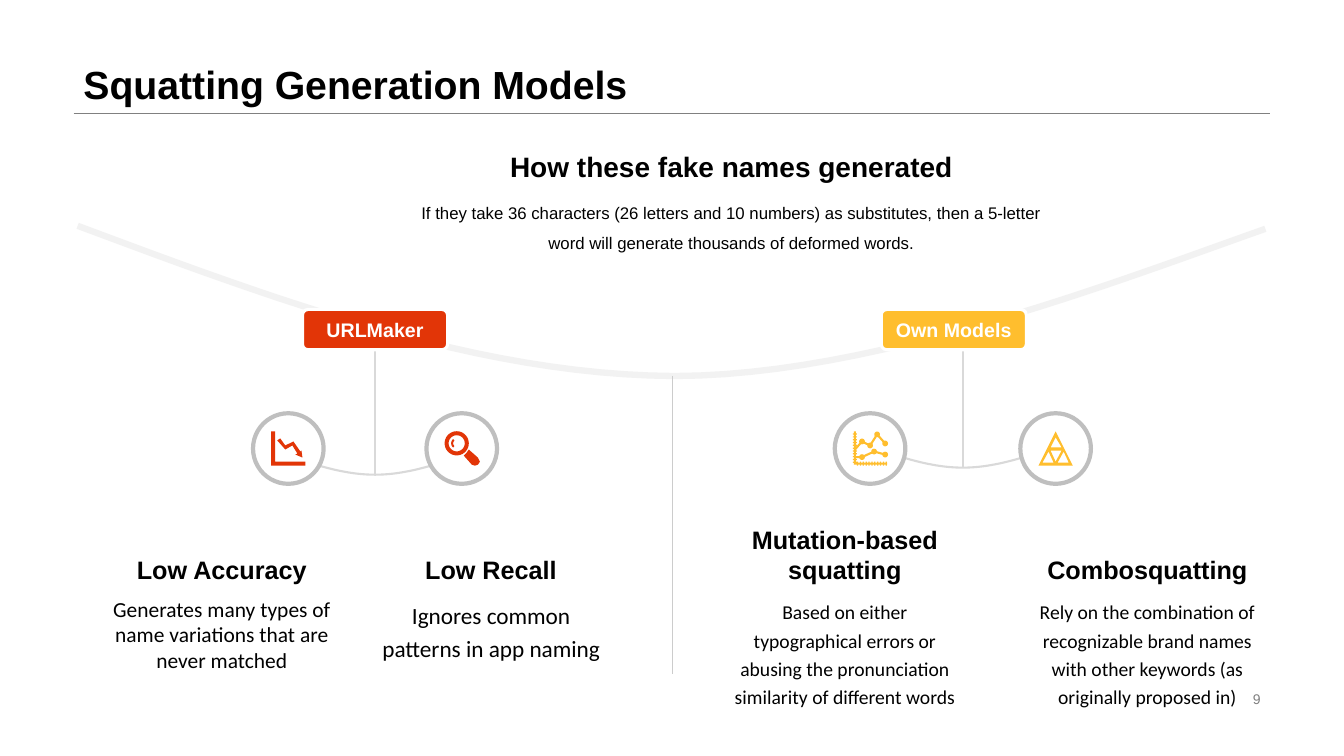
import math

import pptx
import pptx.dml.color
import pptx.enum.shapes
import pptx.enum.text
import pptx.oxml.ns
import pptx.util
from pptx.util import Inches

RED, YELLOW = "E23507", "FFBE2E"
WHITE, BLACK, GREY = "FFFFFF", "000000", "808080"
SHAPES = pptx.enum.shapes.MSO_SHAPE
ALIGN = pptx.enum.text.PP_ALIGN
ANCHOR = pptx.enum.text.MSO_ANCHOR


def color(value):
    return pptx.dml.color.RGBColor.from_string(value)


def style(shape, fill=None, line=None, width=1):
    shape.shadow.inherit = False
    if fill:
        shape.fill.solid()
        shape.fill.fore_color.rgb = color(fill)
    else:
        shape.fill.background()
    if line:
        shape.line.color.rgb = color(line)
        shape.line.width = pptx.util.Pt(width)
    else:
        shape.line.fill.background()


def write(shape, text, size, name="Arial", ink=BLACK, bold=False, align=ALIGN.CENTER,
          anchor=ANCHOR.TOP, spacing=1.0, wrap=True):
    frame = shape.text_frame
    frame.word_wrap = wrap
    frame.vertical_anchor = anchor
    paragraph = frame.paragraphs[0]
    paragraph.text = text
    paragraph.alignment = align
    paragraph.line_spacing = spacing
    font_format = {"name": name, "size": pptx.util.Pt(size), "bold": bold}
    for attribute, value in font_format.items():
        setattr(paragraph.font, attribute, value)
    paragraph.font.color.rgb = color(ink)


def add_text(slide, box, text, size, **text_format):
    write(slide.shapes.add_textbox(*map(Inches, box)), text, size, **text_format)


def add_line(slide, start, end, ink, width):
    connector = slide.shapes.add_connector(
        pptx.enum.shapes.MSO_CONNECTOR.STRAIGHT, *map(Inches, start + end))
    connector.line.color.rgb = color(ink)
    connector.line.width = pptx.util.Pt(width)
    properties = connector.element.spPr
    properties.append(properties.makeelement(pptx.oxml.ns.qn("a:effectLst"), {}))


def add_outline(slide, contours, closed=True, **shape_format):
    """Draw contours given in inches as one freeform."""
    contours = [[(Inches(x), Inches(y)) for x, y in points] for points in contours]
    builder = slide.shapes.build_freeform(*contours[0][0])
    for number, points in enumerate(contours):
        if number:
            builder.move_to(*points[0])
        builder.add_line_segments(points[1:], close=closed)
    style(builder.convert_to_shape(), **shape_format)


def bezier(*controls, steps=24):
    """Points along a cubic curve."""
    weights = (1, 3, 3, 1)
    return [
        tuple(sum(weight * (1 - t) ** (3 - power) * t ** power * control[axis]
                  for power, (weight, control) in enumerate(zip(weights, controls)))
              for axis in (0, 1))
        for t in (step / steps for step in range(steps + 1))
    ]


def circle(x, y, radius, first=0, last=360):
    return [(x + radius * math.cos(math.radians(angle)),
             y + radius * math.sin(math.radians(angle)))
            for angle in range(first, last + 1, 10)]


def rectangle(x, y, width, height):
    return [(x, y), (x + width, y), (x + width, y + height), (x, y + height)]


def place(left, top, contours):
    """Move contours from hundredths of an inch to the icon's corner."""
    return [[(left + x / 100, top + y / 100) for x, y in points] for points in contours]


def falling_chart_icon(slide, left, top, ink):
    arrow = [(9, 7), (14, 14), (22, 10), (29, 20), (30, 19), (31, 26), (24, 23),
             (26, 22), (21, 14), (14, 18), (6, 9)]
    axes = [(0, 0), (4, 0), (4, 30), (34, 30), (34, 34), (0, 34)]
    add_outline(slide, place(left, top, [arrow, axes]), fill=ink)


def magnifier_icon(slide, left, top, ink):
    handle = [(24, 18), (33, 26), (35, 30), (33, 33), (30, 34), (27, 33), (19, 24), (22, 21)]
    glint = circle(12, 11.8, 5.5, 130, 230) + circle(12, 11.8, 3.5, 130, 230)[::-1]
    lens = [circle(12, 11.8, radius) for radius in (12, 8)]
    add_outline(slide, place(left, top, [handle, glint] + lens), fill=ink)


def line_chart_icon(slide, left, top, ink):
    axes = [(1, 0), (3, 0), (3, 31), (34, 31), (34, 33), (1, 33)]
    ticks = [tick for step in range(11) for tick in (
        rectangle(0, 2 + 2.8 * step, 4, 1.2), rectangle(4 + 2.85 * step, 30, 1.2, 4))]
    add_outline(slide, place(left, top, [axes]), fill=ink)
    add_outline(slide, place(left, top, ticks), fill=ink)
    for series in ([(2, 18), (9, 10), (17, 14), (24, 3), (32, 12)],
                   [(2, 25.5), (9, 25.5), (21, 20), (32, 23)]):
        add_outline(slide, place(left, top, [series]), closed=False, line=ink, width=1.5)
        dots = [circle(x, y, 2.8) for x, y in series[1:]]
        add_outline(slide, place(left, top, dots), fill=ink)


def triangles_icon(slide, left, top, ink):
    triangles = [[(17, 0), (0, 34), (34, 34)], [(17, 6), (23, 16), (12, 16)],
                 [(4, 31), (10, 20), (15, 31)], [(12, 19), (23, 19), (17, 30)],
                 [(25, 20), (30, 31), (19, 31)]]
    add_outline(slide, place(left, top, triangles), fill=ink)


def heading(slide, left, top, width, height):
    add_line(slide, (left, top + height), (left + width, top + height), GREY, 0.25)
    add_text(slide, (left, top, width, height), "Squatting Generation Models", 28,
             bold=True, align=ALIGN.LEFT, anchor=ANCHOR.BOTTOM, spacing=0.9)


def introduction(slide, left, top, width):
    add_text(slide, (left, top, width, 0.63), "How these fake names generated", 20,
             bold=True, anchor=ANCHOR.BOTTOM)
    add_text(slide, (left, top + 0.62, width, 0.89),
             "If they take 36 characters (26 letters and 10 numbers) as substitutes, "
             "then a 5-letter word will generate thousands of deformed words.", 12, spacing=1.5)


def backdrop(slide, left, top):
    """Sagging curve with the divider below its lowest point."""
    bottom = top + 1.49
    middle = (left + 5.92, bottom)
    curve = bezier((left, top), (left + 1.98, top + 0.74), (left + 3.96, top + 1.48), middle)
    curve += bezier(middle, (left + 7.89, bottom), (left + 10.31, top + 0.55),
                    (left + 11.78, top + 0.03))[1:]
    add_outline(slide, [curve], closed=False, line="F2F2F2", width=4.5)
    add_line(slide, (left + 5.9, bottom), (left + 5.9, bottom + 2.96), "CCCCCC", 0.5)


def branch(slide, box, name, ink, label_left, arc_top, icons):
    """Label, stem and arc that carry one round icon at each end of the box."""
    left, top, width, height = box
    center, size = left + width / 2, 0.7
    arc_bottom = arc_top + 0.26
    arc = bezier((center - 1.05, arc_top), (center - 0.7, arc_top + 0.13),
                 (center - 0.35, arc_bottom), (center, arc_bottom))
    arc += [(2 * center - x, y) for x, y in arc[-2::-1]]
    add_line(slide, (center, top + 0.4), (center, arc_bottom), "D9D9D9", 1.5)
    add_outline(slide, [arc], closed=False, line="D9D9D9", width=1.5)
    label = slide.shapes.add_shape(
        SHAPES.ROUNDED_RECTANGLE, *map(Inches, (label_left, top, 1.44, 0.4)))
    label.adjustments[0] = 0.14
    style(label, fill=ink, line=WHITE, width=2.25)
    write(label, name, 14, ink=WHITE, bold=True, anchor=ANCHOR.MIDDLE, wrap=False)
    ring_top = top + height - size
    for ring_left, icon in zip((left, left + width - size), icons):
        ring = slide.shapes.add_shape(
            SHAPES.OVAL, *map(Inches, (ring_left, ring_top, size, size)))
        style(ring, fill=WHITE, line="BFBFBF", width=3)
        icon(slide, ring_left + 0.18, ring_top + 0.18, ink)


def caption(slide, left, top, title, text, size, spacing):
    add_text(slide, (left, top, 2.42, 0.42), title, 18, bold=True,
             anchor=ANCHOR.BOTTOM, wrap=False)
    add_text(slide, (left, top + 0.43, 2.42, 0.85), text, size, name="Calibri", spacing=spacing)


def main():
    presentation = pptx.Presentation()
    presentation.slide_width, presentation.slide_height = Inches(13.33), Inches(7.5)
    slide = presentation.slides.add_slide(presentation.slide_layouts[6])
    heading(slide, 0.73, 0, 11.87, 1.12)
    add_text(slide, (9.42, 6.82, 3.18, 0.23), "9", 10, ink=GREY,
             align=ALIGN.RIGHT, anchor=ANCHOR.MIDDLE)
    backdrop(slide, 0.77, 2.24)
    branch(slide, (2.51, 3.07, 2.42, 1.73), "URLMaker", RED, 3, 4.45,
           (falling_chart_icon, magnifier_icon))
    branch(slide, (8.28, 3.07, 2.54, 1.73), "Own Models", YELLOW, 8.74, 4.38,
           (line_chart_icon, triangles_icon))
    introduction(slide, 3.97, 1.24, 6.57)
    for left, title, text, size, spacing in (
        (0.99, "Low Accuracy",
         "Generates many types of name variations that are never matched", 15.3, 1.0),
        (3.66, "Low Recall", "Ignores common patterns in app naming", 16.6, 1.2),
        (7.17, "Mutation-based squatting",
         "Based on either typographical errors or abusing the pronunciation "
         "similarity of different words", 14, 1.2),
        (10.17, "Combosquatting",
         "Rely on the combination of recognizable brand names with other keywords "
         "(as originally proposed in)", 14, 1.2),
    ):
        caption(slide, left, 5.43, title, text, size, spacing)
    presentation.save("out.pptx")


if __name__ == "__main__":
    main()
